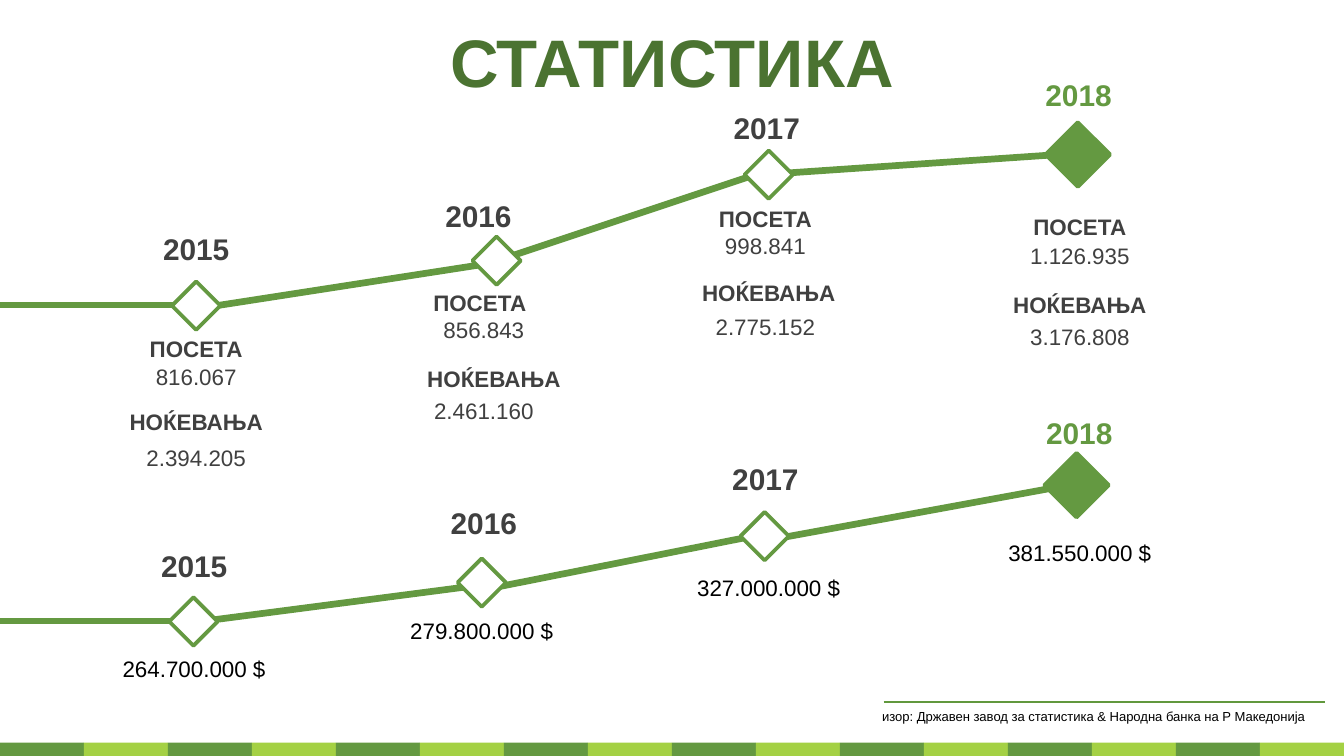
from lxml import etree
from pptx import Presentation
from pptx import util as u
from pptx.dml import color
from pptx.enum import shapes, text
from pptx.oxml import ns

PX = 4572
WIDTH, HEIGHT = 2000, 1125
GREEN, LIME, DEEP, RULE = "649941", "A4D144", "4B7331", "61983D"
GREY, WHITE, BLACK = "404040", "FFFFFF", "000000"

VISITS = [
    ("2015", (292, 455), (219, 333, 146), (0, 454, 292, 454)),
    ("2016", (739, 388), (639, 284, 146), (270, 463, 716, 394)),
    ("2017", (1144, 260), (1068, 153, 146), (722, 394, 1148, 252)),
    ("2018", (1604, 230), (1406, 104, 398), (1134, 260, 1634, 226)),
]
INCOME = [
    ("2015", (288, 925), (216, 804, 146), (0, 924, 288, 924)),
    ("2016", (717, 867), (647, 741, 146), (290, 926, 736, 868)),
    ("2017", (1138, 798), (1066, 675, 146), (738, 874, 1130, 796)),
    ("2018", (1602, 722), (1471, 607, 270), (1164, 800, 1590, 722)),
]
COUNTS = [
    ((121, 489), "816.067", "2.394.205", (2, 42), (0, 108)),
    ((543, 421), "856.843", "2.461.160", (8, 40), (21, 112)),
    ((968, 295), "998.841", "2.775.152", (2, 41), (5, 111)),
    ((1436, 307), "1.126.935", "3.176.808", (2, 43), (0, 117)),
]
SUMS = [
    ((162, 965), "264.700.000 $"),
    ((590, 909), "279.800.000 $"),
    ((1017, 844), "327.000.000 $"),
    ((1480, 792), "381.550.000 $"),
]


def px(*vals):
    """Turn px lengths into EMU."""
    return [u.Emu(val * PX) for val in vals]


def rgb(code):
    """Turn a hex string into a colour."""
    return color.RGBColor.from_string(code)


def style(para, size, hue, bold=False, align=text.PP_ALIGN.CENTER):
    """Set the font and alignment of a paragraph."""
    para.alignment = align
    font = para.font
    font.name, font.size, font.bold = "Arial", u.Pt(size), bold
    font.color.rgb = rgb(hue)


def label(slide, box, lines, size, hue, bold=False, wrap=True, gap=0,
          anchor=text.MSO_ANCHOR.MIDDLE, align=text.PP_ALIGN.CENTER):
    """Add a text box with one paragraph for each line."""
    frame = slide.shapes.add_textbox(*px(*box)).text_frame
    frame.word_wrap, frame.vertical_anchor = wrap, anchor
    for i, line in enumerate(lines):
        para = frame.add_paragraph() if i else frame.paragraphs[0]
        para.text = line
        style(para, size, hue, bold, align)
        if i:
            para.space_before = u.Pt(gap)


def block(slide, kind, box, fill, edge=None):
    """Add a filled preset shape, with an outline if an edge is given."""
    shape = slide.shapes.add_shape(kind, *px(*box))
    shape.shadow.inherit = False
    shape.fill.solid()
    shape.fill.fore_color.rgb = rgb(fill)
    if edge:
        shape.line.color.rgb = rgb(edge)
        shape.line.width = u.Pt(2)
    else:
        shape.line.fill.background()


def link(slide, ends, hue, width):
    """Add a straight line between two points."""
    line = slide.shapes.add_connector(shapes.MSO_CONNECTOR.STRAIGHT, *px(*ends))
    line.line.color.rgb = rgb(hue)
    line.line.width = u.Pt(width)
    etree.SubElement(line._element.spPr, ns.qn("a:effectLst"))


def strip(slide, box, count=16):
    """Draw the band of alternating tiles in a box."""
    x, y, wide, high = box
    tile = wide // count
    for i in range(count):
        block(slide, shapes.MSO_SHAPE.RECTANGLE, (x + i * tile, y, tile, high),
              (GREEN, LIME)[i % 2])


def heading(slide, box, words):
    """Place the slide title."""
    title = slide.shapes.title
    title.left, title.top, title.width, title.height = px(*box)
    title.text_frame.vertical_anchor = text.MSO_ANCHOR.MIDDLE
    title.text_frame.text = words
    style(title.text_frame.paragraphs[0], 36, DEEP, True)


def trend(slide, stops):
    """Draw a rising line with a diamond and a year at each stop."""
    for *_, ends in stops:
        link(slide, ends, GREEN, 3.6)
    for year, (x, y), (left, top, wide), _ in stops:
        last = year == stops[-1][0]
        size = 96 if last else 72
        block(slide, shapes.MSO_SHAPE.DIAMOND,
              (x - size // 2, y - size // 2, size, size),
              GREEN if last else WHITE, GREEN)
        label(slide, (left, top, wide, 74), [year], 16, GREEN if last else GREY, True)


def counts(slide, spot, visits, nights, value, sub):
    """Write the visits and nights of one year."""
    x, y = spot
    label(slide, (x + value[0], y + value[1], 338, 222), [visits, nights], 12, GREY,
          gap=29, anchor=text.MSO_ANCHOR.TOP)
    label(slide, (x, y, 342, 60), ["ПОСЕТА"], 12, GREY, True)
    label(slide, (x + sub[0], y + sub[1], 342, 60), ["НОЌЕВАЊА"], 12, GREY, True)


def source(slide, box, words):
    """Write the source note under its rule."""
    x, y, wide, high = box
    label(slide, box, [words], 7, BLACK, wrap=False,
          anchor=text.MSO_ANCHOR.TOP, align=text.PP_ALIGN.LEFT)
    link(slide, (x + 22, y, x + wide - 3, y), RULE, 1)


def main():
    """Build and save the slide."""
    deck = Presentation()
    deck.slide_width, deck.slide_height = px(WIDTH, HEIGHT)
    slide = deck.slides.add_slide(deck.slide_layouts[5])
    strip(slide, (0, 1105, WIDTH, 21))
    heading(slide, (0, 27, WIDTH, 126), "СТАТИСТИКА")
    trend(slide, VISITS)
    for row in COUNTS:
        counts(slide, *row)
    trend(slide, INCOME)
    for spot, amount in SUMS:
        label(slide, (*spot, 254, 60), [amount], 12, BLACK, wrap=False,
              anchor=text.MSO_ANCHOR.TOP)
    source(slide, (1293, 1045, 682, 44),
           "изор: Државен завод за статистика & Народна банка на Р Македонија")
    deck.save("out.pptx")


if __name__ == "__main__":
    main()
